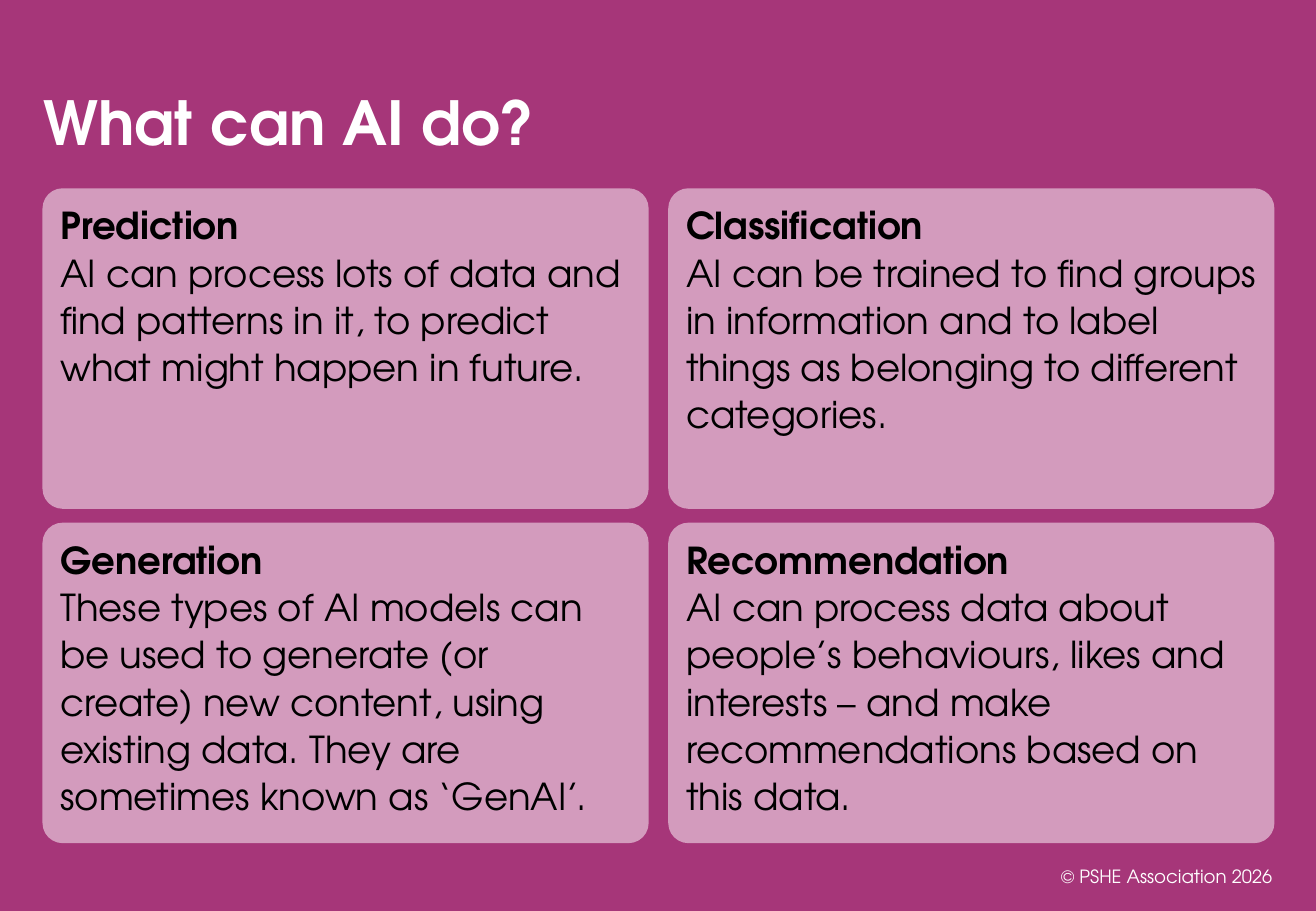
from pptx import Presentation
from pptx.dml.color import RGBColor
from pptx.enum.shapes import MSO_SHAPE
from pptx.enum.text import MSO_ANCHOR, MSO_AUTO_SIZE, PP_ALIGN
from pptx.util import Pt

ABILITIES = [
    ("Prediction",
     "AI can process lots of data and find patterns in it, to predict what might happen in future."),
    ("Classification",
     "AI can be trained to find groups in information and to label things as belonging "
     "to different categories."),
    ("Generation",
     "These types of AI models can be used to generate (or create) new content, using existing "
     "data. They are sometimes known as ‘GenAI’."),
    ("Recommendation",
     "AI can process data about people’s behaviours, likes and interests – and make "
     "recommendations based on this data."),
]


def paint(fill, colour):
    """Give a fill one solid colour."""
    fill.solid()
    fill.fore_color.rgb = RGBColor.from_string(colour)


def write(para, text, font="TeX Gyre Adventor", size=22, colour="000000", bold=False,
          align=PP_ALIGN.LEFT, spacing=None):
    """Put one formatted span of text in a paragraph."""
    para.alignment = align
    if spacing:
        para.line_spacing = Pt(spacing)
    span = para.add_run()
    span.text = text
    span.font.name = font
    span.font.size = Pt(size)
    span.font.bold = bold
    paint(span.font.fill, colour)


class Builder:
    """Hold the style and the current page."""

    background = "A63679"
    panel = "D39BBD"
    light = "FFFFFF"

    def __init__(self, deck):
        """Add a title-only page with the background colour."""
        self.page = deck.slides.add_slide(deck.slide_layouts[5])
        paint(self.page.background.fill, self.background)

    def frame(self, box, anchor):
        """Set wrapping and anchor of a box and return its text frame."""
        frame = box.text_frame
        frame.word_wrap = True
        frame.auto_size = MSO_AUTO_SIZE.NONE
        frame.vertical_anchor = anchor
        return frame

    def title(self, text, left, top, width, height):
        """Place and fill the title placeholder."""
        box = self.page.shapes.title
        box.left, box.top, box.width, box.height = Pt(left), Pt(top), Pt(width), Pt(height)
        frame = self.frame(box, MSO_ANCHOR.BOTTOM)
        write(frame.paragraphs[0], text, size=36, colour=self.light, bold=True, spacing=43)

    def footer(self, text, left, top, width, height):
        """Add the right-aligned copyright line."""
        box = self.page.shapes.add_textbox(Pt(left), Pt(top), Pt(width), Pt(height))
        frame = self.frame(box, MSO_ANCHOR.MIDDLE)
        write(frame.paragraphs[0], text, size=10.8, colour=self.light, align=PP_ALIGN.RIGHT)

    def card(self, heading, body, left, top, width, height):
        """Add a rounded panel with a bold heading and body text."""
        box = self.page.shapes.add_shape(
            MSO_SHAPE.ROUNDED_RECTANGLE, Pt(left), Pt(top), Pt(width), Pt(height))
        box.adjustments[0] = 0.063
        box.shadow.inherit = False
        paint(box.fill, self.panel)
        box.line.fill.background()
        frame = self.frame(box, MSO_ANCHOR.TOP)
        write(frame.paragraphs[0], heading, bold=True, spacing=28)
        write(frame.add_paragraph(), body, spacing=28)


def main():
    """Build the deck and save it."""
    deck = Presentation()
    deck.slide_width, deck.slide_height = Pt(779.8), Pt(540)
    builder = Builder(deck)
    builder.title("What can AI do?", 18.7, 42.5, 384.5, 54.7)
    builder.footer("© PSHE Association 2026", 585.4, 504.7, 175.7, 29.5)
    for index, (heading, body) in enumerate(ABILITIES):
        row, column = divmod(index, 2)
        builder.card(heading, body, 25.2 + 370.8 * column, 111.6 + 198.2 * row, 359.2, 190)
    deck.save("out.pptx")


if __name__ == "__main__":
    main()
